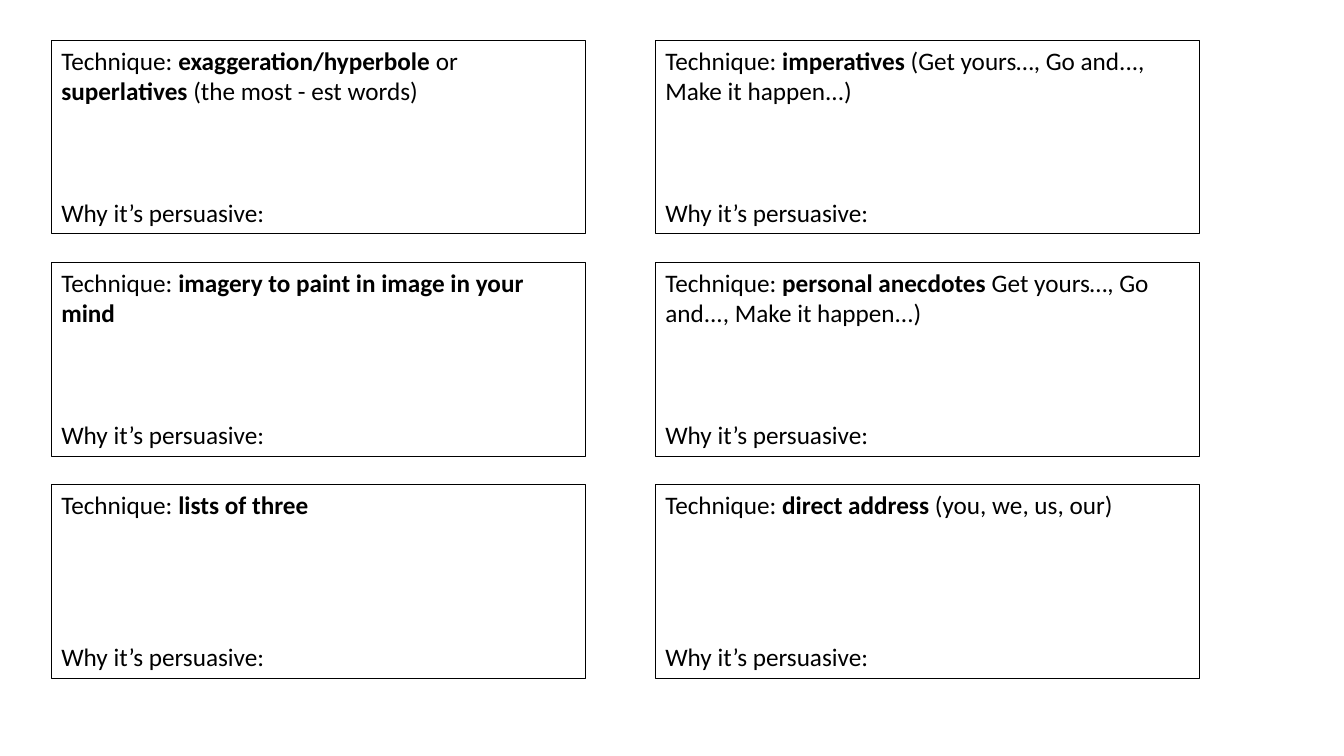
from dataclasses import dataclass

from pptx import Presentation
from pptx.dml.color import RGBColor
from pptx.enum.text import MSO_ANCHOR as Anchor, MSO_AUTO_SIZE as AutoSize
from pptx.util import Inches, Pt


@dataclass(frozen=True)
class Theme:
    font: str = "Calibri"
    ink: RGBColor = RGBColor(0x00, 0x00, 0x00)
    text_size: float = 18
    line_pitch: float = 21.7
    border: float = 0.75


# Card grid: left edge and width per column, top edge per row
COLUMNS = [(0.51, 5.3), (6.5, 5.4)]
TOP, ROW_STEP, CARD_HEIGHT = 0.4, 2.205, 1.92
PROMPT = "Why it’s persuasive:"

# Each card: blank writing lines, then (text, bold) spans of the technique
CARDS = [
    [
        (3, [("exaggeration/hyperbole", True), (" or ", False),
             ("superlatives", True), (" (the most - est words)", False)]),
        (3, [("imagery to paint in image in your mind", True)]),
        (4, [("lists of three", True)]),
    ],
    [
        (3, [("imperatives ", True),
             ("(Get yours…, Go and..., Make it happen...)", False)]),
        (3, [("personal anecdotes ", True),
             ("Get yours…, Go and..., Make it happen...)", False)]),
        (4, [("direct address ", True), ("(you, we, us, our)", False)]),
    ],
]


class Worksheet:
    """Holds the theme and the current page."""

    def __init__(self, page, theme):
        self.page = page
        self.theme = theme

    def add_spans(self, para, spans):
        for text, bold in spans:
            span = para.add_run()
            span.text = text
            formats = {"name": self.theme.font, "size": Pt(self.theme.text_size),
                       "bold": bold}
            for name, value in formats.items():
                setattr(span.font, name, value)
            span.font.color.rgb = self.theme.ink

    def add_card(self, left, top, width, blank_lines, technique):
        box = self.page.shapes.add_textbox(
            Inches(left), Inches(top), Inches(width), Inches(CARD_HEIGHT))
        box.line.color.rgb = self.theme.ink
        box.line.width = Pt(self.theme.border)
        frame = box.text_frame
        formats = {"word_wrap": True, "vertical_anchor": Anchor.TOP,
                   "auto_size": AutoSize.SHAPE_TO_FIT_TEXT}
        for name, value in formats.items():
            setattr(frame, name, value)

        # Technique, then writing room, then the prompt
        self.add_spans(frame.paragraphs[0], [("Technique: ", False), *technique])
        para = frame.add_paragraph()
        para.space_before = Pt(blank_lines * self.theme.line_pitch)
        self.add_spans(para, [(PROMPT, False)])


def main():
    deck = Presentation()
    deck.slide_width, deck.slide_height = Inches(13.33), Inches(7.5)
    blank_layout = deck.slide_layouts[6]
    sheet = Worksheet(deck.slides.add_slide(blank_layout), Theme())

    # Two columns of three technique cards
    for (left, width), cards in zip(COLUMNS, CARDS):
        for row, (blank_lines, technique) in enumerate(cards):
            sheet.add_card(left, TOP + row * ROW_STEP, width, blank_lines, technique)

    deck.save("out.pptx")


if __name__ == "__main__":
    main()
